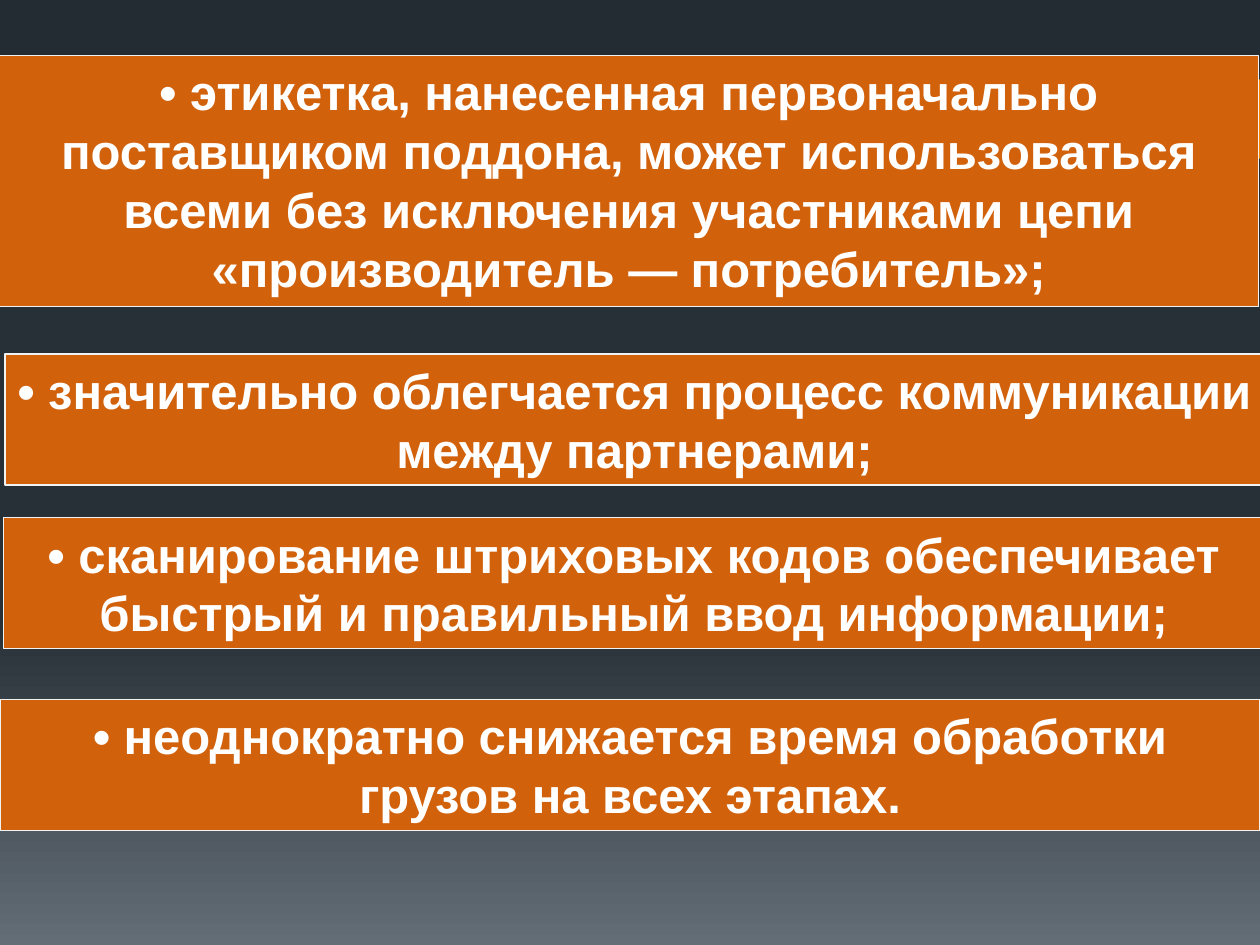
from pptx import Presentation
from pptx.dml.color import RGBColor
from pptx.enum.shapes import MSO_SHAPE
from pptx.enum.text import MSO_ANCHOR, MSO_AUTO_SIZE, PP_ALIGN
from pptx.oxml import parse_xml
from pptx.oxml.ns import nsdecls
from pptx.util import Inches, Pt

COLORS = {
    "top": "242C33",
    "middle": "273037",
    "bottom": "636D76",
    "accent": "FF8600",
    "band": "D2610C",
    "border": "F2F2F2",
    "text": "FFFFFF",
}

# Left, top, width, height and text of each band
BANDS = [
    (-0.01, 0.44, 10, 1.99,
     "• этикетка, нанесенная первоначально поставщиком поддона, может "
     "использоваться всеми без исключения участниками цепи "
     "«производитель — потребитель»;"),
    (0.04, 2.81, 9.99, 1.04,
     "• значительно облегчается процесс коммуникации между партнерами;"),
    (0.03, 4.11, 10, 1.04,
     "• сканирование штриховых кодов обеспечивает быстрый и правильный "
     "ввод информации;"),
    (0, 5.55, 10, 1.04,
     "• неоднократно снижается время обработки грузов на всех этапах."),
]


def color(name):
    return RGBColor.from_string(COLORS[name])


def set_background(s):
    """Vertical gradient given as (percent, colour name) stops."""
    stops = "".join(
        f'<a:gs pos="{pos * 1000}"><a:srgbClr val="{COLORS[name]}"/></a:gs>'
        for pos, name in [(0, "top"), (65, "middle"), (100, "bottom")])
    bg = parse_xml(
        f'<p:bg {nsdecls("p", "a")}><p:bgPr><a:gradFill rotWithShape="1">'
        f'<a:gsLst>{stops}</a:gsLst><a:lin ang="5400000" scaled="0"/>'
        '</a:gradFill><a:effectLst/></p:bgPr></p:bg>')
    s._element.cSld.insert(0, bg)


def add_rect(s, left, top, width, height, fill):
    sp = s.shapes.add_shape(MSO_SHAPE.RECTANGLE, Inches(left), Inches(top),
                            Inches(width), Inches(height))
    sp.shadow.inherit = False
    sp.fill.solid()
    sp.fill.fore_color.rgb = color(fill)
    sp.line.fill.background()
    return sp


def add_band(s, left, top, width, height, text):
    sp = add_rect(s, left, top, width, height, "band")
    sp.line.color.rgb = color("border")
    sp.line.width = Pt(0.75)
    tf = sp.text_frame
    tf.word_wrap = True
    tf.auto_size = MSO_AUTO_SIZE.SHAPE_TO_FIT_TEXT
    tf.vertical_anchor = MSO_ANCHOR.TOP
    p = tf.paragraphs[0]
    p.text = text
    p.alignment = PP_ALIGN.CENTER
    p.font.name = "Arial"
    p.font.size = Pt(28)
    p.font.bold = True
    p.font.color.rgb = color("text")


def main():
    prs = Presentation()
    prs.slide_width, prs.slide_height = Inches(10), Inches(7.5)
    s = prs.slides.add_slide(prs.slide_layouts[6])
    set_background(s)

    # Accent square behind the first band
    add_rect(s, 9.37, 0.63, 0.63, 0.63, "accent")

    # Statement bands
    for band in BANDS:
        add_band(s, *band)

    prs.save("out.pptx")


if __name__ == "__main__":
    main()
